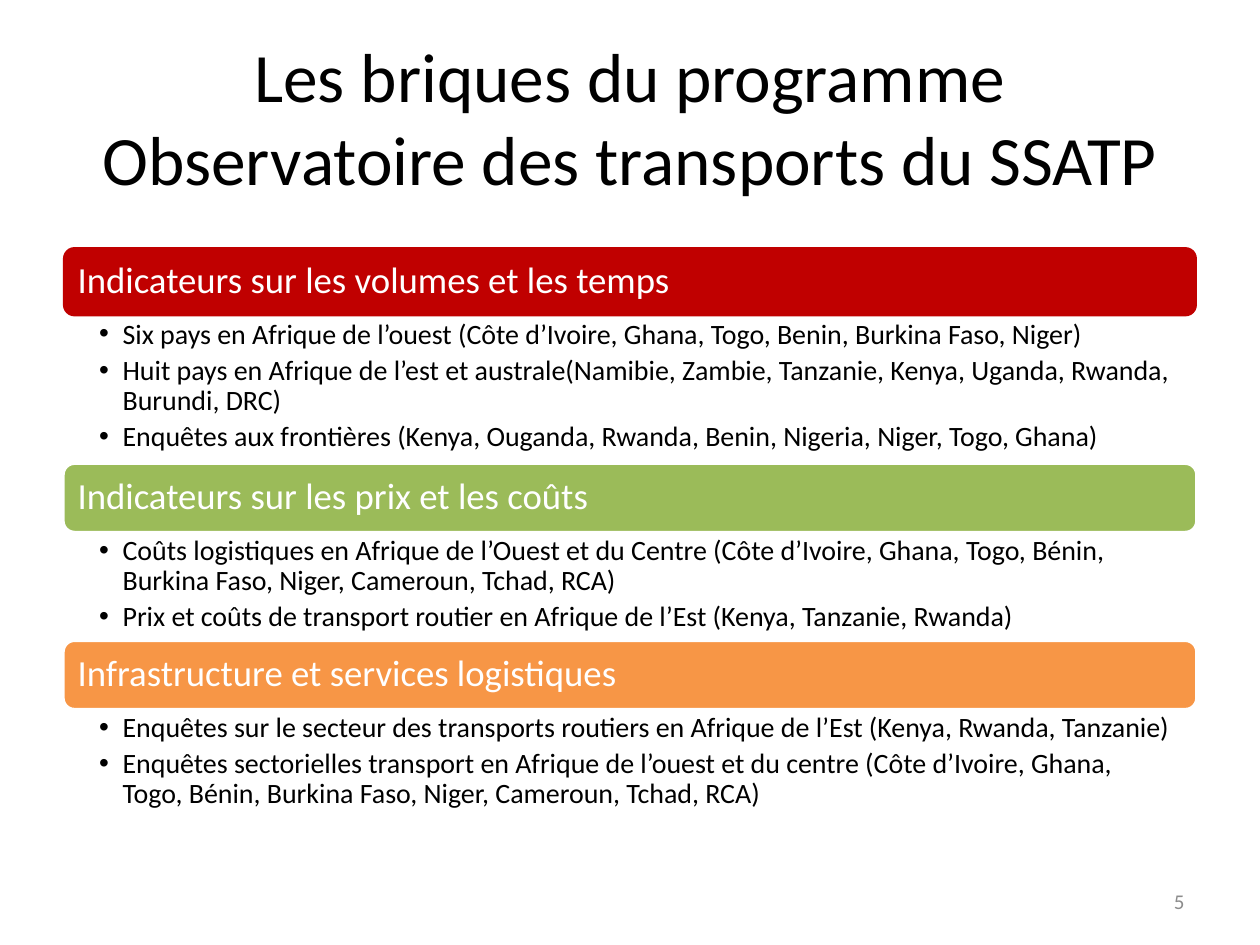
"""Build the slide on the building blocks of the transport observatory programme."""
from dataclasses import dataclass

from lxml import etree
from pptx import Presentation
from pptx import util as u
from pptx.dml.color import RGBColor
from pptx.enum import shapes, text
from pptx.oxml import ns

Pt = u.Pt
FONT = "Calibri"
BLACK = RGBColor(0x00, 0x00, 0x00)
WHITE = RGBColor(0xFF, 0xFF, 0xFF)
GREY = RGBColor(0x8C, 0x8C, 0x8C)
RED = RGBColor(0xC0, 0x00, 0x00)
GREEN = RGBColor(0x9B, 0xBB, 0x59)
ORANGE = RGBColor(0xF7, 0x96, 0x46)
LEFT, WIDTH, TOP, BAR = 36, 648, 141.2, 39.6
INSET = 2


@dataclass
class Brick:
    head: str
    fill: RGBColor
    edge: bool
    depth: float
    items: list[str]


BRICKS = [
    Brick("Indicateurs sur les volumes et les temps", RED, False, 83.9, [
        "Six pays en Afrique de l’ouest (Côte d’Ivoire, Ghana, Togo, Benin, Burkina Faso, Niger)",
        "Huit pays en Afrique de l’est et australe(Namibie, Zambie, Tanzanie, Kenya, Uganda, "
        "Rwanda, Burundi, DRC)",
        "Enquêtes aux frontières (Kenya, Ouganda, Rwanda, Benin, Nigeria, Niger, Togo, Ghana)",
    ]),
    Brick("Indicateurs sur les prix et les coûts", GREEN, True, 61.6, [
        "Coûts logistiques en Afrique de l’Ouest et du Centre (Côte d’Ivoire, Ghana, Togo, "
        "Bénin, Burkina Faso, Niger, Cameroun, Tchad, RCA)",
        "Prix et coûts de transport routier en Afrique de l’Est (Kenya, Tanzanie, Rwanda)",
    ]),
    Brick("Infrastructure et services logistiques", ORANGE, True, 61.6, [
        "Enquêtes sur le secteur des transports routiers en Afrique de l’Est "
        "(Kenya, Rwanda, Tanzanie)",
        "Enquêtes sectorielles transport en Afrique de l’ouest et du centre (Côte d’Ivoire, "
        "Ghana, Togo, Bénin, Burkina Faso, Niger, Cameroun, Tchad, RCA)",
    ]),
]


def style(para, size: float, color: RGBColor) -> None:
    for run in para.runs:
        run.font.name = FONT
        run.font.size = Pt(size)
        run.font.color.rgb = color


def add_box(slide, words: str, area: tuple, pads: tuple, mid: bool):
    frame = slide.shapes.add_textbox(*map(Pt, area)).text_frame
    frame.word_wrap = True
    (frame.margin_left, frame.margin_top,
     frame.margin_right, frame.margin_bottom) = map(Pt, pads)
    frame.vertical_anchor = text.MSO_ANCHOR.MIDDLE if mid else text.MSO_ANCHOR.TOP
    frame.text = words
    return frame


def add_bullet(para) -> None:
    props = para._p.get_or_add_pPr()
    props.set("marL", str(Pt(13.5)))
    props.set("indent", str(Pt(-13.5)))
    etree.SubElement(props, ns.qn("a:buFont")).set("typeface", "Arial")
    etree.SubElement(props, ns.qn("a:buChar")).set("char", "•")


def add_brick(slide, brick: Brick, top: float) -> None:
    bar = slide.shapes.add_shape(shapes.MSO_SHAPE.ROUNDED_RECTANGLE,
                                 Pt(LEFT), Pt(top), Pt(WIDTH), Pt(BAR))
    bar.shadow.inherit = False
    bar.fill.solid()
    bar.fill.fore_color.rgb = brick.fill
    if brick.edge:
        bar.line.color.rgb = WHITE
        bar.line.width = Pt(2)
    else:
        bar.line.fill.background()

    area = (LEFT + INSET, top + INSET, WIDTH - 2 * INSET, BAR - 2 * INSET)
    head = add_box(slide, brick.head, area, (6.3,) * 4, True).paragraphs[0]
    head.line_spacing = 0.9
    style(head, 21, WHITE)

    area = (LEFT, top + BAR, WIDTH, brick.depth)
    body = add_box(slide, "\n".join(brick.items), area, (20.6, 2.1, 11.5, 2.1), False)
    for para in body.paragraphs:
        add_bullet(para)
        para.level = 1
        para.line_spacing = 0.9
        para.space_after = Pt(3.4)
        style(para, 16, BLACK)


def add_title(slide) -> None:
    title = slide.shapes.title
    title.left, title.top, title.width, title.height = map(Pt, (LEFT, 21.6, WIDTH, 90))
    frame = title.text_frame
    frame.text = "Les briques du programme Observatoire des transports du SSATP"
    frame.word_wrap = True
    frame.auto_size = text.MSO_AUTO_SIZE.NONE
    frame.vertical_anchor = text.MSO_ANCHOR.MIDDLE
    para = frame.paragraphs[0]
    para.alignment = text.PP_ALIGN.CENTER
    style(para, 39.6, BLACK)


def main() -> None:
    deck = Presentation()
    deck.slide_width, deck.slide_height = Pt(720), Pt(540)
    slide = deck.slides.add_slide(deck.slide_layouts[5])
    add_title(slide)
    top = TOP
    for brick in BRICKS:
        add_brick(slide, brick, top)
        top += BAR + brick.depth
    page = add_box(slide, "5", (516, 500.5, 168, 28.8), (7.2, 3.6, 7.2, 3.6), True)
    page.paragraphs[0].alignment = text.PP_ALIGN.RIGHT
    style(page.paragraphs[0], 12, GREY)
    deck.save("out.pptx")


if __name__ == "__main__":
    main()
